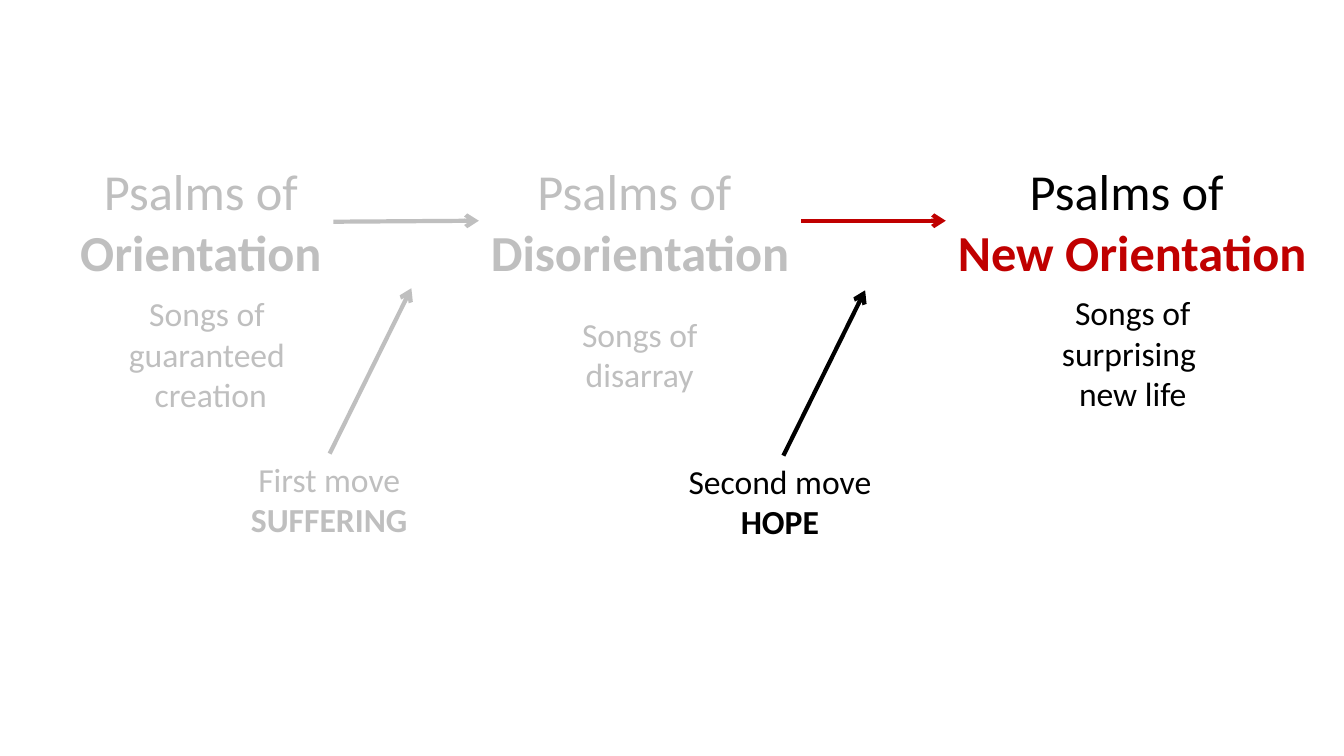
from dataclasses import dataclass

from lxml import etree
from pptx import Presentation
from pptx import util as u
from pptx.dml.color import RGBColor
from pptx.enum import shapes, text
from pptx.oxml.ns import qn


@dataclass(frozen=True)
class Theme:
    font: str = "Calibri"
    faded: str = "BFBFBF"
    ink: str = "000000"
    accent: str = "C00000"
    heading: int = 36
    body: int = 24
    stroke: int = 3


THEME = Theme()
WIDTH, HEIGHT = u.Inches(13.33), u.Inches(7.5)


def across(percent):
    return round(WIDTH * percent / 100)


def down(percent):
    return round(HEIGHT * percent / 100)


def add_text(slide, box, lines, size=THEME.body, color=THEME.ink,
             bold_last=False, last_color=None, wrap=True):
    """Centre lines in a box given as left, top, width, height in percent of the slide."""
    left, top, width, height = box
    shape = slide.shapes.add_textbox(across(left), down(top), across(width), down(height))
    frame = shape.text_frame
    frame.word_wrap = wrap
    frame.auto_size = text.MSO_AUTO_SIZE.SHAPE_TO_FIT_TEXT
    paragraph = frame.paragraphs[0]
    paragraph.alignment = text.PP_ALIGN.CENTER
    paragraph.font.size = u.Pt(size)
    for index, line in enumerate(lines):
        is_last = index == len(lines) - 1
        if index:
            paragraph.add_line_break()
        run = paragraph.add_run()
        run.text = line
        run.font.name = THEME.font
        run.font.size = u.Pt(size)
        run.font.bold = bold_last and is_last
        run.font.color.rgb = RGBColor.from_string(last_color if is_last and last_color else color)


def add_arrow(slide, start, end, color):
    """Draw an open-headed arrow between two points in percent of the slide."""
    arrow = slide.shapes.add_connector(
        shapes.MSO_CONNECTOR.STRAIGHT,
        across(start[0]), down(start[1]), across(end[0]), down(end[1]))
    arrow.line.width = u.Pt(THEME.stroke)
    arrow.line.color.rgb = RGBColor.from_string(color)
    etree.SubElement(arrow.line._get_or_add_ln(), qn("a:tailEnd"), type="arrow")
    etree.SubElement(arrow._element.spPr, qn("a:effectLst"))


def add_psalm_type(slide, left, width, lines, color, last_color=None):
    add_text(slide, (left, 20.53, width, 17.47), lines, size=THEME.heading,
             color=color, bold_last=True, last_color=last_color, wrap=False)


def add_move(slide, left, top, arrow_left, lines, color):
    """Add a move's label and the arrow rising from it to the transition above."""
    add_text(slide, (left, top, 20.93, 12.13), lines, color=color, bold_last=True)
    add_arrow(slide, (arrow_left, top), (arrow_left + 6.08, top - 21.87), color)


def main():
    presentation = Presentation()
    presentation.slide_width, presentation.slide_height = WIDTH, HEIGHT
    slide = presentation.slides.add_slide(presentation.slide_layouts[6])

    add_psalm_type(slide, 5.1, 19.7, ["Psalms of", "Orientation"], THEME.faded)
    add_psalm_type(slide, 35.63, 24, ["Psalms of ", "Disorientation"], THEME.faded)
    add_psalm_type(slide, 70.37, 27.76, ["Psalms of ", "New Orientation"],
                   THEME.ink, last_color=THEME.accent)

    add_arrow(slide, (24.8, 29.33), (35.63, 29.2), THEME.faded)
    add_arrow(slide, (59.63, 29.2), (70.37, 29.2), THEME.accent)

    add_text(slide, (8.78, 38.13, 13.8, 17.47), ["Songs of ", "guaranteed ", "creation"],
             color=THEME.faded, wrap=False)
    add_text(slide, (37.13, 40.8, 20.93, 12.13), ["Songs of", "disarray"], color=THEME.faded)
    add_text(slide, (72.84, 38, 22.88, 17.47), ["Songs of", "surprising ", "new life"])

    add_move(slide, 14.03, 60, 24.53, ["First move", "SUFFERING"], THEME.faded)
    add_move(slide, 47.56, 60.27, 58.29, ["Second move", "HOPE"], THEME.ink)

    presentation.save("out.pptx")


if __name__ == "__main__":
    main()
